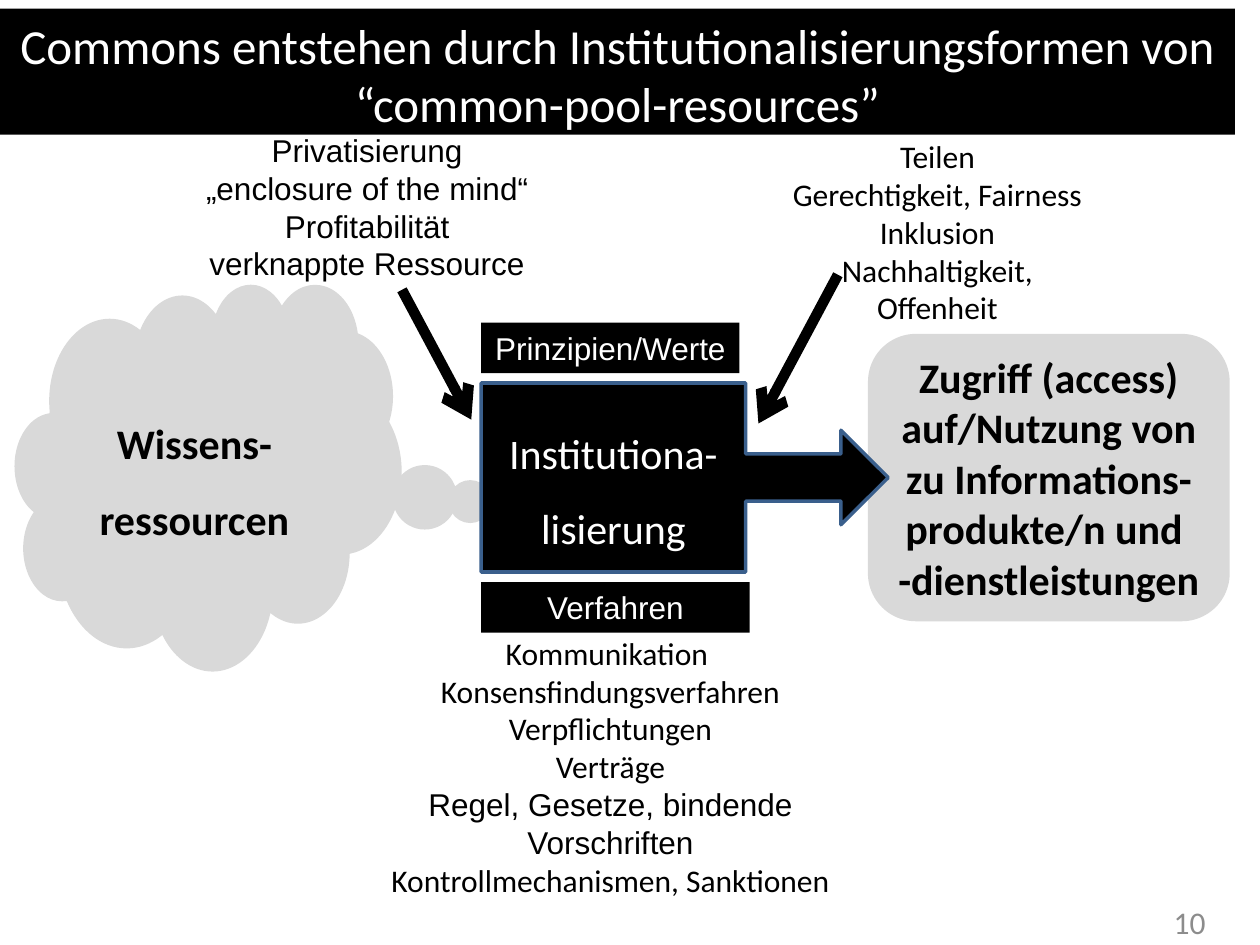
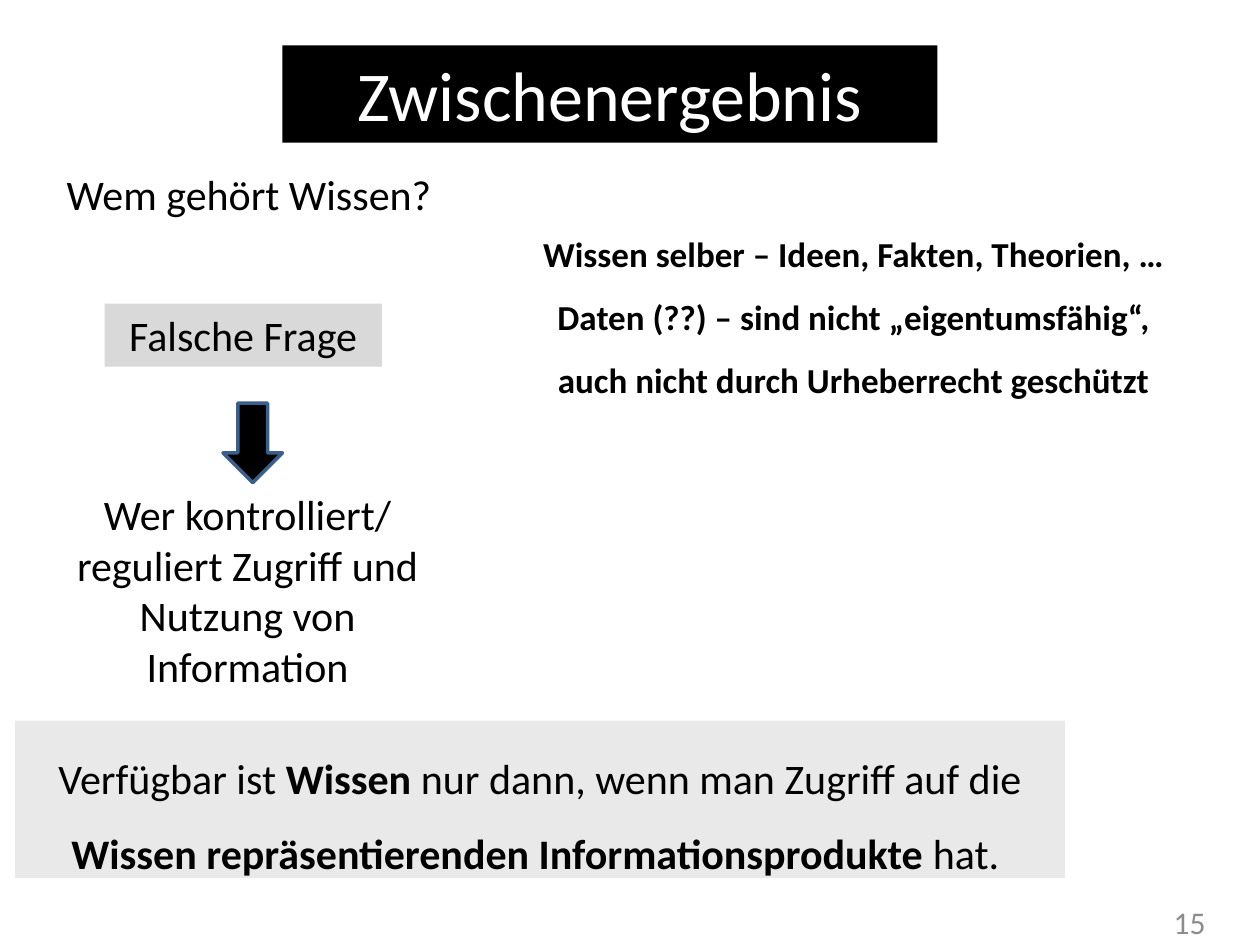
from dataclasses import dataclass

from lxml.etree import SubElement
from pptx import Presentation
from pptx.dml.color import RGBColor as Rgb
from pptx.enum.shapes import MSO_CONNECTOR as Connector, MSO_SHAPE as Shape
from pptx.enum.text import MSO_ANCHOR as Anchor, MSO_AUTO_SIZE as AutoSize, PP_ALIGN as Align
from pptx.oxml.ns import qn
from pptx.util import Pt


@dataclass(frozen=True)
class Theme:
    """Colours, fonts and type sizes of the deck."""
    black: str = "000000"
    white: str = "FFFFFF"
    grey: str = "D9D9D9"
    pale: str = "E9E9E9"
    muted: str = "8C8C8C"
    outline: str = "3A5F8C"
    main_font: str = "Calibri"
    label_font: str = "Arial"
    small: int = 18
    medium: int = 20
    large: int = 24
    headline: int = 28
    banner: int = 40


THEME = Theme()


def points(*lengths):
    """Turn plain numbers into point lengths."""
    return [Pt(length) for length in lengths]


def paint(shape, fill):
    """Give a shape a solid fill."""
    shape.fill.solid()
    shape.fill.fore_color.rgb = Rgb.from_string(fill)


def write_text(shape, paragraphs, size=THEME.small, color=THEME.black, font=THEME.main_font,
               bold=False, align=Align.CENTER, anchor=Anchor.TOP, spacing=None):
    """Write paragraphs, each a string or a list of (text, bold) spans."""
    frame = shape.text_frame
    frame.word_wrap = True
    frame.auto_size = AutoSize.NONE
    frame.vertical_anchor = anchor
    for index, content in enumerate(paragraphs):
        para = frame.paragraphs[0] if index == 0 else frame.add_paragraph()
        para.alignment = align
        para.line_spacing = spacing
        spans = [(content, bold)] if isinstance(content, str) else content
        for text, strong in spans:
            for number, line in enumerate(text.split("\n")):
                if number:
                    para.add_line_break()
                span = para.add_run()
                span.text = line
                span.font.name = font
                span.font.size = Pt(size)
                span.font.bold = strong
                span.font.color.rgb = Rgb.from_string(color)


def add_title(page, place, text, size):
    """Set the title as white text on a black band."""
    title = page.shapes.title
    title.left, title.top, title.width, title.height = points(*place)
    paint(title, THEME.black)
    write_text(title, [text], size=size, color=THEME.white)


def add_label(page, place, paragraphs, **text_format):
    """Add text without a fill."""
    label = page.shapes.add_textbox(*points(*place))
    write_text(label, paragraphs, **text_format)


def add_box(page, place, fill, paragraphs=(), kind=Shape.RECTANGLE, outlined=False,
            adjustments=(), **text_format):
    """Add a filled preset shape with optional outline and text."""
    box = page.shapes.add_shape(kind, *points(*place))
    box.shadow.inherit = False
    paint(box, fill)
    if outlined:
        box.line.color.rgb = Rgb.from_string(THEME.outline)
        box.line.width = Pt(2)
    else:
        box.line.fill.background()
    for index, value in enumerate(adjustments):
        box.adjustments[index] = value
    write_text(box, paragraphs, **text_format)


def add_arrow(page, start, end):
    """Add a thick black line with an open arrowhead at its end."""
    arrow = page.shapes.add_connector(Connector.STRAIGHT, *points(*start, *end))
    arrow.line.color.rgb = Rgb.from_string(THEME.black)
    arrow.line.width = Pt(6)
    SubElement(arrow.line._get_or_add_ln(), qn("a:tailEnd"), type="arrow")
    SubElement(arrow._element.spPr, qn("a:effectLst"))


def add_page(deck, number, title, place, size):
    """Add a slide with its title band and page number."""
    page = deck.slides.add_slide(deck.slide_layouts.get_by_name("Title Only"))
    add_title(page, place, title, size)
    add_label(page, (528, 512.5, 168, 28.75), [number], color=THEME.muted,
              align=Align.RIGHT, anchor=Anchor.MIDDLE)
    return page


def build_commons(deck):
    """Show how institutions turn resources into commons."""
    page = add_page(deck, "10", "Commons entstehen durch Institutionalisierungsformen von "
                    "“common-pool-resources”", (0, 5, 705.6, 72), THEME.headline)
    add_box(page, (8.5, 162, 221, 221), THEME.grey, ["Wissens-ressourcen"],
            kind=Shape.CLOUD_CALLOUT, adjustments=(0.74, 0.07), size=THEME.large,
            bold=True, anchor=Anchor.MIDDLE, spacing=1.5)
    add_box(page, (496, 190.8, 206.7, 164.2), THEME.grey,
            ["Zugriff (access) auf/Nutzung von zu Informations-produkte/n und \n"
             "-dienstleistungen"],
            kind=Shape.ROUNDED_RECTANGLE, size=THEME.large, bold=True, anchor=Anchor.MIDDLE)
    for text, top, width in (("Prinzipien/Werte", 184.3, 147.6), ("Verfahren", 332.6, 153.4)):
        add_box(page, (275, top, width, 29), THEME.black, [text],
                color=THEME.white, font=THEME.label_font)
    add_label(page, (105, 71.3, 209.5, 94.3),
              ["Privatisierung", "„enclosure of the mind“", "Profitabilität",
               "verknappte Ressource"], font=THEME.label_font)
    add_arrow(page, (478.8, 157), (433.4, 242))
    add_arrow(page, (229.7, 165.6), (269.3, 239.8))
    add_label(page, (439.2, 74.9, 193, 116.6),
              ["Teilen", "Gerechtigkeit, Fairness", "Inklusion", "Nachhaltigkeit, Offenheit"])
    methods = (201.6, 358.6, 294.5, 160)
    rules = "Regel, Gesetze, bindende Vorschriften"
    add_label(page, methods, ["Kommunikation ", "Konsensfindungsverfahren", "Verpflichtungen",
                              "Verträge", rules, "Kontrollmechanismen, Sanktionen"])
    for para in page.shapes[-1].text_frame.paragraphs:
        if para.text == rules:
            para.runs[0].font.name = THEME.label_font
    add_box(page, (275, 218.9, 232.6, 108), THEME.black, ["Institutiona-", "lisierung"],
            kind=Shape.RIGHT_ARROW_CALLOUT, outlined=True, size=THEME.large,
            color=THEME.white, anchor=Anchor.MIDDLE, spacing=1.5)


def build_interim_result(deck):
    """Replace the question of ownership by one of access."""
    page = add_page(deck, "15", "Zwischenergebnis", (161.3, 26, 374.4, 55.5), THEME.banner)
    add_box(page, (31, 93, 232.6, 36), THEME.white, ["Wem gehört Wissen?"],
            size=THEME.large, align=Align.LEFT)
    add_box(page, (25.2, 275.8, 232.6, 123.8), THEME.white,
            ["Wer kontrolliert/ reguliert Zugriff und Nutzung von Information"], size=THEME.large)
    add_label(page, (292.3, 117.4, 391, 118),
              ["Wissen selber – Ideen, Fakten, Theorien, … Daten (??) – sind nicht "
               "„eigentumsfähig“, auch nicht durch Urheberrecht geschützt"],
              size=THEME.medium, bold=True, spacing=1.5)
    add_box(page, (59.8, 173.5, 158.4, 36), THEME.grey, ["Falsche Frage"],
            size=THEME.large, anchor=Anchor.MIDDLE)
    add_box(page, (127.4, 230.4, 34, 45.4), THEME.black, kind=Shape.DOWN_ARROW, outlined=True)
    add_box(page, (8.6, 411.8, 600, 90), THEME.pale,
            [[("Verfügbar ist ", False), ("Wissen ", True),
              ("nur dann, wenn man Zugriff auf die ", False),
              ("Wissen repräsentierenden Informationsprodukte ", True), ("hat. ", False)]],
            size=THEME.large, spacing=1.5)


def main():
    """Build and save the deck."""
    deck = Presentation()
    deck.slide_width, deck.slide_height = points(720, 540)
    build_commons(deck)
    build_interim_result(deck)
    deck.save("out.pptx")


if __name__ == "__main__":
    main()
